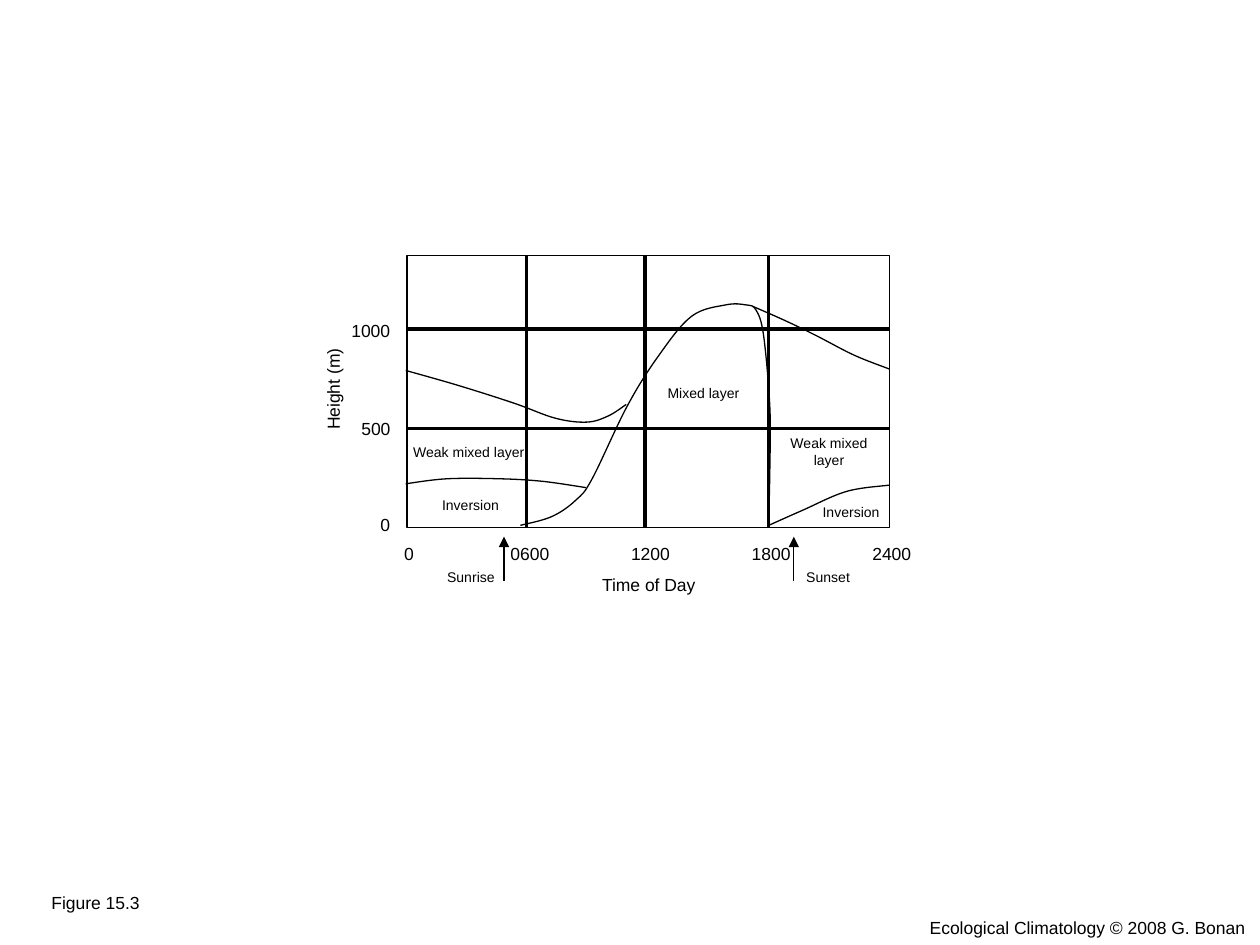
import pptx
import pptx.dml.color
import pptx.enum.shapes
import pptx.enum.text
import pptx.oxml
import pptx.oxml.ns
import pptx.util
from pptx.util import Inches

BLACK = "000000"

# Heights of layer boundaries: knots in inches from the plot's top left corner
LAYER_CURVES = [
    # Daytime mixed layer, from sunrise to its collapse at sunset
    [(0.9, 2.14), (1.15, 2.07), (1.34, 1.94), (1.47, 1.77), (1.75, 1.19),
     (2, 0.79), (2.26, 0.48), (2.53, 0.39), (2.69, 0.39), (2.77, 0.43),
     (2.83, 0.63), (2.88, 1.2), (2.88, 1.7), (2.87, 2.16)],
    # Evening inversion and weak mixed layer
    [(2.87, 2.14), (3.14, 2.02), (3.49, 1.87), (3.83, 1.82)],
    [(2.74, 0.4), (2.99, 0.51), (3.24, 0.63), (3.55, 0.79), (3.83, 0.9)],
    # Morning inversion and weak mixed layer
    [(-0.01, 1.81), (0.32, 1.77), (0.73, 1.77), (1.07, 1.79), (1.42, 1.84)],
    [(-0.01, 0.91), (0.41, 1.03), (0.85, 1.17), (1.18, 1.29), (1.43, 1.32),
     (1.6, 1.27), (1.74, 1.18)],
]

# Text, left, top, width from the plot's top left corner
LAYER_LABELS = [
    ("Mixed layer", 1.97, 0.97, 0.77),
    ("Inversion", 0.18, 1.86, 0.65),
    ("Inversion", 3.2, 1.92, 0.65),
    ("Weak mixed layer", -0.05, 1.44, 1.09),
]


def color(hex_string):
    return pptx.dml.color.RGBColor.from_string(hex_string)


def add_label(page, text, left, top, width, size=10, height=None, wrap=False,
              align="LEFT"):
    if height is None:
        height = 0.27 if size == 10 else 0.23
    box = page.shapes.add_textbox(Inches(left), Inches(top), Inches(width), Inches(height))
    frame = box.text_frame
    frame.text = text
    frame.word_wrap = wrap
    frame.auto_size = pptx.enum.text.MSO_AUTO_SIZE.SHAPE_TO_FIT_TEXT
    para = frame.paragraphs[0]
    para.alignment = getattr(pptx.enum.text.PP_ALIGN, align)
    for span in para.runs:
        span.font.name = "Arial"
        span.font.size = pptx.util.Pt(size)
        span.font.color.rgb = color(BLACK)
    return box


def format_outline(shape, width):
    shape.line.color.rgb = color(BLACK)
    shape.line.width = pptx.util.Pt(width)


def add_line(page, start, end, width=0, arrow=False):
    line = page.shapes.add_connector(
        pptx.enum.shapes.MSO_CONNECTOR.STRAIGHT,
        *[Inches(length) for length in (*start, *end)])
    format_outline(line, width)
    if arrow:
        pptx.oxml.ns.qn("a:tailEnd")
        head = pptx.oxml.parse_xml(
            f'<a:tailEnd {pptx.oxml.ns.nsdecls("a")} type="triangle"/>')
        line.line._get_or_add_ln().append(head)
    line._element.spPr.append(
        pptx.oxml.parse_xml(f'<a:effectLst {pptx.oxml.ns.nsdecls("a")}/>'))


def add_curve(page, knots):
    """Draw a smooth curve through the knots."""
    points = [(Inches(x), Inches(y)) for x, y in knots]
    builder = page.shapes.build_freeform(*points[0])
    builder.add_line_segments(points[1:], close=False)
    curve = builder.convert_to_shape()
    curve.shadow.inherit = False
    curve.fill.background()
    format_outline(curve, 0.75)

    # Turn each straight segment into a Bezier; tangents follow the neighbours
    qn = pptx.oxml.ns.qn
    local = [(int(point.get("x")), int(point.get("y")))
             for point in curve._element.iter(qn("a:pt"))]
    padded = [local[0], *local, local[-1]]
    segments = list(curve._element.iter(qn("a:lnTo")))
    for segment, before, start, end, after in zip(
            segments, padded, padded[1:], padded[2:], padded[3:]):
        first = [s + (e - b) / 6 for b, s, e in zip(before, start, end)]
        second = [e - (a - s) / 6 for s, e, a in zip(start, end, after)]
        marks = "".join(f'<a:pt x="{round(x)}" y="{round(y)}"/>'
                        for x, y in (first, second, end))
        bezier = pptx.oxml.parse_xml(
            f'<a:cubicBezTo {pptx.oxml.ns.nsdecls("a")}>{marks}</a:cubicBezTo>')
        segment.getparent().replace(segment, bezier)


def add_plot(page, left, top, width, height):
    # Frame and grid
    frame = page.shapes.add_shape(
        pptx.enum.shapes.MSO_SHAPE.RECTANGLE,
        Inches(left), Inches(top), Inches(width), Inches(height))
    frame.shadow.inherit = False
    frame.fill.background()
    format_outline(frame, 0.75)
    for x in (0.95, 1.89, 2.87):
        add_line(page, (left + x, top + height), (left + x, top))
    for y in (1.37, 0.58):
        add_line(page, (left, top + y), (left + width, top + y))

    # Layer boundaries and names
    for knots in LAYER_CURVES:
        add_curve(page, [(left + x, top + y) for x, y in knots])
    for text, x, y, label_width in LAYER_LABELS:
        add_label(page, text, left + x, top + y, label_width, size=8)
    add_label(page, "Weak mixed layer", left + 2.93, top + 1.37, 0.84, size=8,
              height=0.37, wrap=True, align="CENTER")


def add_axes(page, left, top, width, height):
    # Height axis: labels end just left of the frame
    for text, y, label_width in (("0", 2, 0.28), ("500", 1.24, 0.43), ("1000", 0.46, 0.51)):
        add_label(page, text, left - 0.03 - label_width, top + y, label_width)
    title = add_label(page, "Height (m)", left - 1.01, top + 0.92, 0.85)
    title.rotation = 270

    # Time axis: labels centred on equal steps
    bottom = top + height
    for index, text in enumerate(("0", "0600", "1200", "1800", "2400")):
        label_width = 0.28 if text == "0" else 0.51
        center = left + 0.02 + index * width / 4
        add_label(page, text, center - label_width / 2, bottom + 0.07, label_width)
    add_label(page, "Time of Day", left + 1.45, bottom + 0.32, 0.95)

    # Sunrise and sunset marks
    for text, arrow_x, text_x, label_width in (
            ("Sunrise", 0.77, 0.22, 0.58), ("Sunset", 3.07, 3.07, 0.55)):
        add_line(page, (left + arrow_x, bottom + 0.42), (left + arrow_x, bottom + 0.07),
                 width=0.75, arrow=True)
        add_label(page, text, left + text_x, bottom + 0.27, label_width, size=8)


def add_footer(page, left, top, width):
    add_label(page, "Figure 15.3", left + 0.31, top, 0.95, wrap=True)
    add_label(page, "Ecological Climatology © 2008 G. Bonan",
              left + width - 2.72, top + 0.2, 2.72)


def main():
    deck = pptx.Presentation()
    deck.slide_width, deck.slide_height = Inches(10), Inches(7.5)
    page = deck.slides.add_slide(deck.slide_layouts[6])
    plot_box = (3.23, 2.03, 3.83, 2.16)
    add_plot(page, *plot_box)
    add_axes(page, *plot_box)
    add_footer(page, 0, 7.03, 10)
    deck.save("out.pptx")


if __name__ == "__main__":
    main()
